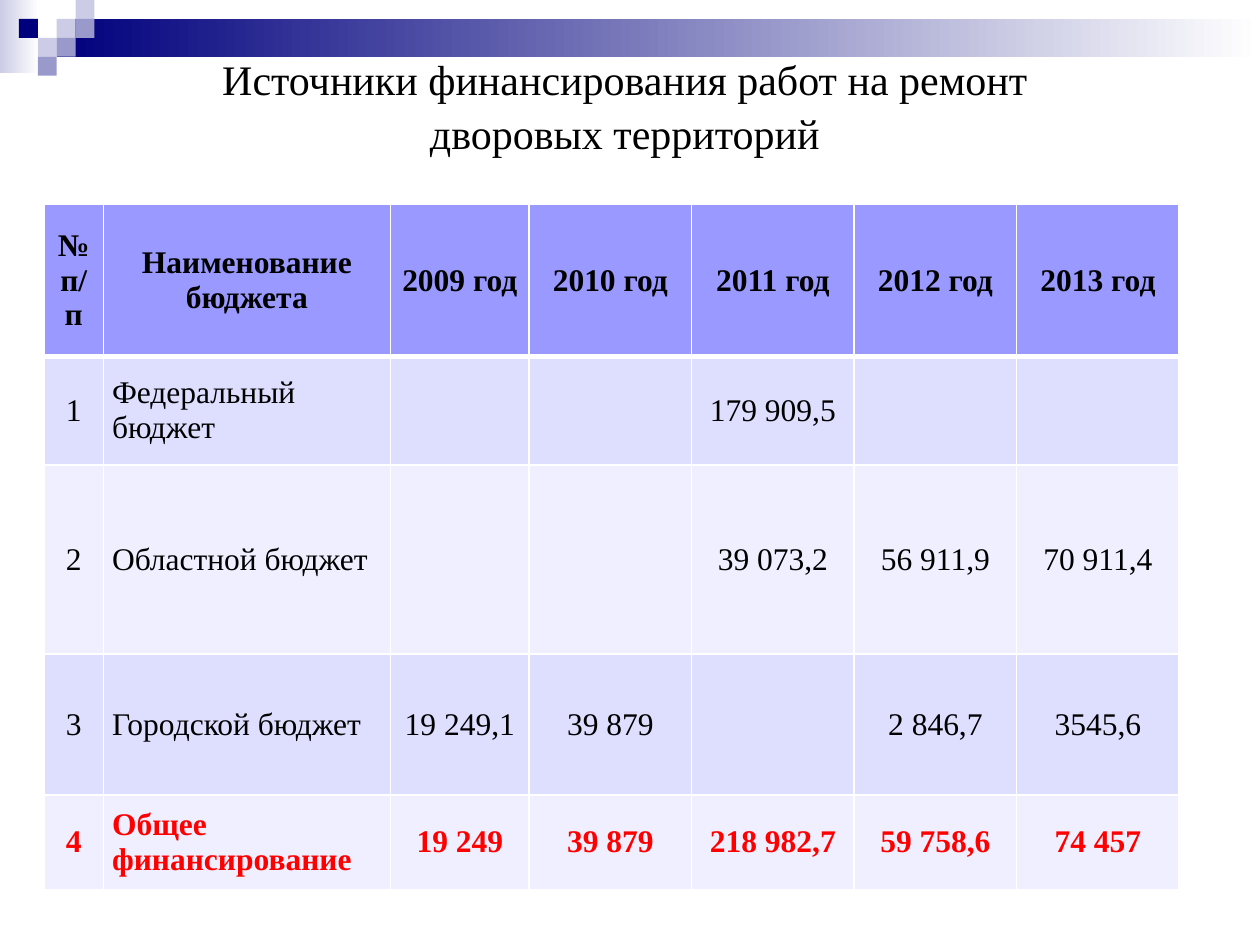
"""Build a slide with a table of funding sources for courtyard repairs."""
from dataclasses import dataclass

from lxml import etree
from pptx import Presentation
from pptx.dml.color import RGBColor
from pptx.enum.shapes import MSO_SHAPE
from pptx.enum.text import MSO_ANCHOR, PP_ALIGN
from pptx.oxml.ns import qn
from pptx.util import Inches, Pt

RECTANGLE = MSO_SHAPE.RECTANGLE
MIDDLE = MSO_ANCHOR.MIDDLE
LEFT, CENTER = PP_ALIGN.LEFT, PP_ALIGN.CENTER

TITLE = ["Источники финансирования работ на ремонт", "дворовых территорий"]
ROWS = [
    ["№ п/п", "Наименование бюджета", "2009 год", "2010 год", "2011 год", "2012 год", "2013 год"],
    ["1", "Федеральный бюджет", "", "", "179 909,5", "", ""],
    ["2", "Областной бюджет", "", "", "39 073,2", "56 911,9", "70 911,4"],
    ["3", "Городской бюджет", "19 249,1", "39 879", "", "2 846,7", "3545,6"],
    ["4", "Общее финансирование", "19 249", "39 879", "218 982,7", "59 758,6", "74 457"],
]
COLUMN_WIDTHS = [0.47, 2.28, 1.1] + [1.29] * 4
ROW_HEIGHTS = [1.21, 0.86, 1.5, 1.12, 0.75]
TABLE_LEFT, TABLE_TOP = 0.35, 1.62
NAME_COLUMN = 1
TOTAL_ROW = len(ROWS) - 1

UNIT = 0.15
SLIDE_WIDTH, SLIDE_HEIGHT = 10, 7.5


@dataclass(frozen=True)
class Theme:
    font: str = "Times New Roman"
    title_size: int = 24
    table_size: int = 18
    text: str = "000000"
    total: str = "FF0000"
    white: str = "FFFFFF"
    navy: str = "00007D"
    pale: str = "CCCCE6"
    violet: str = "9999CC"
    header: str = "9999FF"
    odd_row: str = "DEDEFF"
    even_row: str = "EFEFFF"
    thin: int = 1
    thick: int = 3


THEME = Theme()
FADES = [(0, 0, 0.31, 0.58, THEME.pale), (3 * UNIT, UNIT, SLIDE_WIDTH - 3 * UNIT, 2 * UNIT, THEME.navy)]
MOSAIC = [
    (3, 1, THEME.pale), (4, 0, THEME.pale), (4, 1, THEME.violet), (2, 2, THEME.pale),
    (1, 1, THEME.navy), (3, 2, THEME.violet), (2, 3, THEME.violet),
]


def color(value):
    return RGBColor.from_string(value)


def add_rectangle(page, left, top, width, height):
    shape = page.shapes.add_shape(RECTANGLE, *map(Inches, (left, top, width, height)))
    shape.shadow.inherit = False
    shape.line.fill.background()
    return shape


def add_decoration(page):
    for *frame, start in FADES:
        fill = add_rectangle(page, *frame).fill
        fill.gradient()
        fill.gradient_angle = 0
        for stop, value in zip(fill.gradient_stops, (start, THEME.white)):
            stop.color.rgb = color(value)
    for column, row, value in MOSAIC:
        fill = add_rectangle(page, column * UNIT, row * UNIT, UNIT, UNIT).fill
        fill.solid()
        fill.fore_color.rgb = color(value)


def add_span(para, text, size, value, bold=False):
    span = para.add_run()
    span.text = text
    span.font.name = THEME.font
    span.font.size = Pt(size)
    span.font.bold = bold
    span.font.color.rgb = color(value)


def add_title(page):
    box = page.shapes.add_textbox(*map(Inches, (0.5, 0.5, 9, 0.65)))
    frame = box.text_frame
    frame.word_wrap = True
    frame.vertical_anchor = MIDDLE
    frame.margin_right = Inches(0.18)
    para = frame.paragraphs[0]
    para.alignment = CENTER
    para.line_spacing = 1.07
    for index, line in enumerate(TITLE):
        if index:
            para.add_line_break()
        add_span(para, line, THEME.title_size, THEME.text)


def set_borders(cell, top, bottom):
    properties = cell._tc.get_or_add_tcPr()
    for side, width in zip("LRTB", (THEME.thin, THEME.thin, top, bottom)):
        line = etree.SubElement(properties, qn(f"a:ln{side}"), w=str(Pt(width)))
        fill = etree.SubElement(line, qn("a:solidFill"))
        etree.SubElement(fill, qn("a:srgbClr"), val=THEME.white)


def fill_cell(cell, text, row, column):
    set_borders(cell, THEME.thick if row == 1 else THEME.thin, THEME.thick if row == 0 else THEME.thin)
    cell.fill.solid()
    background = THEME.header if row == 0 else (THEME.even_row, THEME.odd_row)[row % 2]
    cell.fill.fore_color.rgb = color(background)
    cell.vertical_anchor = MIDDLE
    cell.margin_left = cell.margin_right = Inches(0.07)
    cell.margin_top = cell.margin_bottom = 0
    para = cell.text_frame.paragraphs[0]
    para.alignment = LEFT if column == NAME_COLUMN and row else CENTER
    if text:
        value = THEME.total if row == TOTAL_ROW else THEME.text
        add_span(para, text, THEME.table_size, value, row in (0, TOTAL_ROW))


def add_budget_table(page):
    frame = (TABLE_LEFT, TABLE_TOP, sum(COLUMN_WIDTHS), sum(ROW_HEIGHTS))
    table = page.shapes.add_table(len(ROWS), len(COLUMN_WIDTHS), *map(Inches, frame)).table
    for column, width in zip(table.columns, COLUMN_WIDTHS):
        column.width = Inches(width)
    for row, height in zip(table.rows, ROW_HEIGHTS):
        row.height = Inches(height)
    for row, texts in enumerate(ROWS):
        for column, text in enumerate(texts):
            fill_cell(table.cell(row, column), text, row, column)


def main():
    deck = Presentation()
    deck.slide_width, deck.slide_height = Inches(SLIDE_WIDTH), Inches(SLIDE_HEIGHT)
    page = deck.slides.add_slide(deck.slide_layouts[6])
    add_decoration(page)
    add_title(page)
    add_budget_table(page)
    deck.save("out.pptx")


if __name__ == "__main__":
    main()
